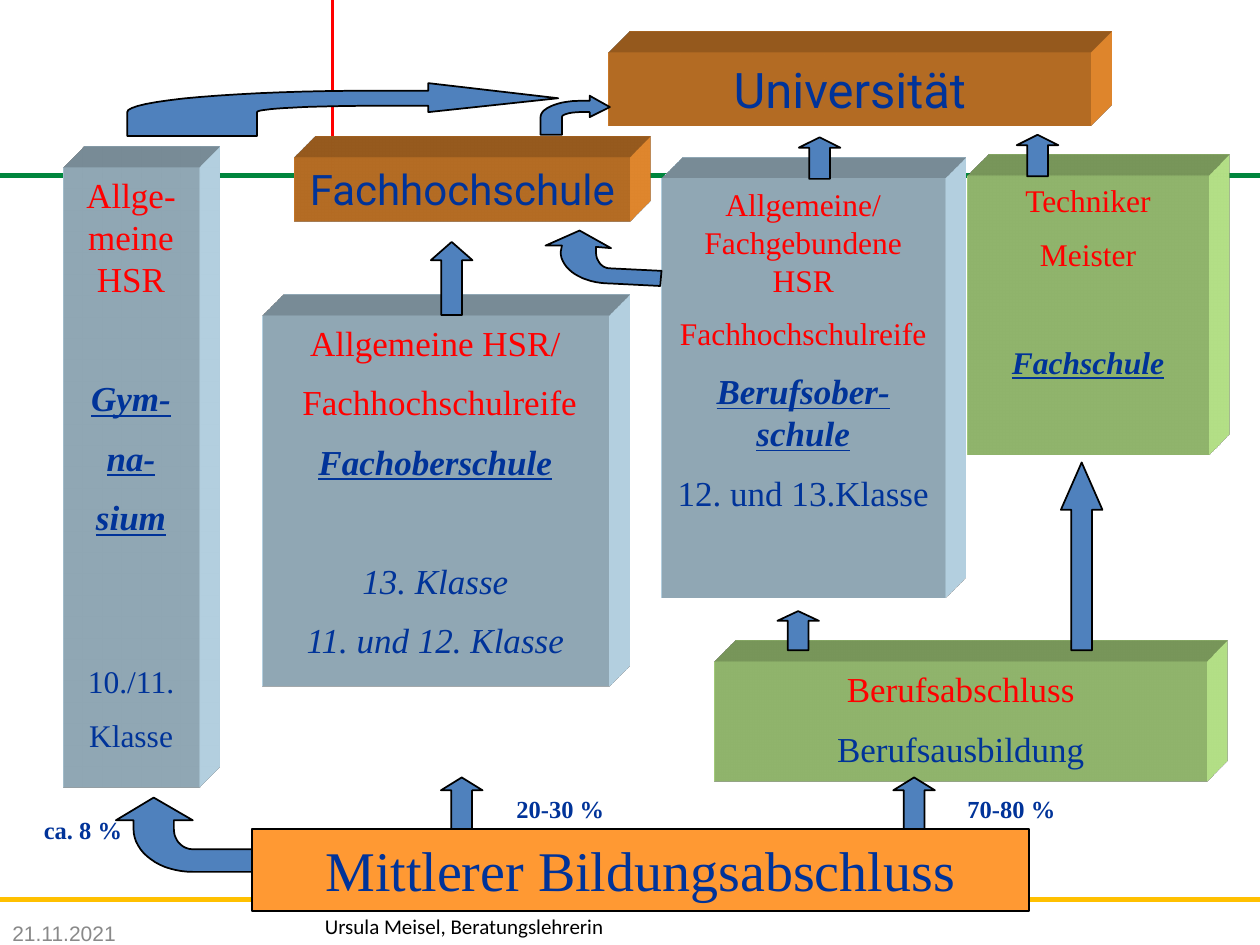
import math

from lxml import etree
from pptx import Presentation
from pptx import util as u
from pptx.dml.color import RGBColor
from pptx.enum import shapes, text
from pptx.oxml import parse_xml
from pptx.oxml.ns import nsdecls, qn

BLACK = RGBColor(0x00, 0x00, 0x00)
RED = RGBColor(0xFF, 0x00, 0x00)
NAVY = RGBColor(0x00, 0x33, 0x99)
GREY = RGBColor(0x89, 0x89, 0x89)
GREEN_RULE = RGBColor(0x00, 0x86, 0x3D)
YELLOW_RULE = RGBColor(0xFF, 0xC0, 0x00)
ORANGE = RGBColor(0xFF, 0x99, 0x33)
PALE_BLUE = RGBColor(0xCC, 0xEC, 0xFF)
PALE_GREEN = RGBColor(0xCC, 0xFF, 0x99)
ARROW_BLUE = RGBColor(0x4F, 0x81, 0xBD)

SERIF = "Times New Roman"
SCHOOL = {"bold": True, "italic": True, "underline": True}


def quarter_arc(centre, radii, start, end, steps=16):
    """Points on an ellipse between two angles in degrees, y pointing down."""
    angles = [math.radians(start + (end - start) * i / steps) for i in range(steps + 1)]
    return [(centre[0] + radii[0] * math.cos(a), centre[1] + radii[1] * math.sin(a))
            for a in angles]


def para(words, size=20, color=NAVY, before=None, **look):
    """One paragraph; the space before it is half its size unless given."""
    return {"words": words, "before": size / 2 if before is None else before,
            "font": {"size": u.Pt(size), "name": SERIF, **look}, "color": color}


class Diagram:
    def __init__(self, slide):
        self.slide = slide

    def set_text(self, shape, paras, align, anchor=text.MSO_ANCHOR.TOP):
        frame = shape.text_frame
        frame.word_wrap = True
        frame.auto_size = text.MSO_AUTO_SIZE.NONE
        frame.vertical_anchor = anchor
        for i, item in enumerate(paras):
            line = frame.add_paragraph() if i else frame.paragraphs[0]
            line.alignment = align
            if i:
                line.space_before = u.Pt(item["before"])
            run = line.add_run()
            run.text = item["words"]
            for key, value in item["font"].items():
                setattr(run.font, key, value)
            run.font.color.rgb = item["color"]

    def paint(self, shape, fill, outline=None):
        shape.shadow.inherit = False
        shape.fill.solid()
        shape.fill.fore_color.rgb = fill
        if outline is None:
            shape.line.fill.background()
        else:
            shape.line.color.rgb = outline
            shape.line.width = u.Pt(1)

    def preset(self, kind, place, fill, outline=None):
        shape = self.slide.shapes.add_shape(kind, *map(u.Inches, place))
        self.paint(shape, fill, outline)
        return shape

    def box(self, place, fill, paras, outline=None):
        shape = self.preset(shapes.MSO_SHAPE.RECTANGLE, place, fill, outline)
        self.set_text(shape, paras, text.PP_ALIGN.CENTER)
        return shape

    def block(self, place, fill, paras):
        """A box extruded towards the upper right."""
        properties = self.box(place, fill, paras)._element.spPr
        properties.append(parse_xml(
            f'<a:scene3d {nsdecls("a")}><a:camera prst="legacyObliqueTopRight"/>'
            '<a:lightRig rig="legacyFlat3" dir="b"/></a:scene3d>'))
        properties.append(parse_xml(
            f'<a:sp3d {nsdecls("a")} extrusionH="430200" prstMaterial="legacyMatte">'
            '<a:bevelT w="13500" h="13500" prst="angle"/>'
            '<a:bevelB w="13500" h="13500" prst="angle"/>'
            f'<a:extrusionClr><a:srgbClr val="{fill}"/></a:extrusionClr></a:sp3d>'))

    def label(self, place, item, anchor=text.MSO_ANCHOR.TOP):
        shape = self.slide.shapes.add_textbox(*map(u.Inches, place))
        self.set_text(shape, [item], text.PP_ALIGN.LEFT, anchor)

    def rule(self, start, end, color, width):
        line = self.slide.shapes.add_connector(
            shapes.MSO_CONNECTOR.STRAIGHT, *map(u.Inches, start + end))
        line.line.color.rgb = color
        line.line.width = u.Pt(width)
        etree.SubElement(line._element.spPr, qn("a:effectLst"))

    def up_arrow(self, left, top, height, head):
        arrow = self.preset(shapes.MSO_SHAPE.UP_ARROW, (left, top, 0.33, height),
                            ARROW_BLUE, BLACK)
        arrow.adjustments[0] = 0.5
        arrow.adjustments[1] = head

    def bent_arrow(self, head, centre, outer, inner, tail, neck, angles):
        """Head, outer bend, tail, inner bend and back to the head."""
        start, end = angles
        points = (head + quarter_arc(centre, outer, start, end) + tail
                  + quarter_arc(centre, inner, end, start) + neck)
        builder = self.slide.shapes.build_freeform(
            *(round(v * 1000) for v in points[0]), scale=u.Inches(1) / 1000)
        builder.add_line_segments([(round(x * 1000), round(y * 1000))
                                   for x, y in points[1:]], close=True)
        self.paint(builder.convert_to_shape(), ARROW_BLUE, BLACK)


def main():
    deck = Presentation()
    deck.slide_width, deck.slide_height = u.Inches(10), u.Inches(7.5)
    d = Diagram(deck.slides.add_slide(deck.slide_layouts[6]))

    # Footer name and background rules
    d.label((2.48, 7.2, 3.39, 0.3),
            para("Ursula Meisel, Beratungslehrerin", 12, BLACK, name="Calibri"))
    d.rule((0, 1.39), (10, 1.39), GREEN_RULE, 2.75)
    d.rule((2.64, 0), (2.64, 1.7), RED, 2)
    d.rule((0, 7.14), (10, 7.14), YELLOW_RULE, 2.75)

    # Starting point
    d.box((2, 6.58, 6.17, 0.65), ORANGE, [para("Mittlerer Bildungsabschluss", 32)], BLACK)

    # Schools
    d.block((0.5, 1.33, 1.08, 4.92), PALE_BLUE, [
        para("Allge-meine HSR", color=RED),
        para("Gym-", before=44, **SCHOOL), para("na-", **SCHOOL), para("sium", **SCHOOL),
        para("10./11.", 18, before=71), para("Klasse", 18)])
    d.block((2.08, 2.5, 2.75, 2.95), PALE_BLUE, [
        para("Allgemeine HSR/", color=RED), para(" Fachhochschulreife", color=RED),
        para("Fachoberschule", **SCHOOL),
        para("13. Klasse", before=44, italic=True), para("11. und 12. Klasse", italic=True)])
    d.block((5.67, 5.25, 3.91, 0.95), PALE_GREEN, [
        para("Berufsabschluss", color=RED), para("Berufsausbildung")])
    d.block((7.68, 1.39, 1.91, 2.22), PALE_GREEN, [
        para("Techniker", 18, RED), para("Meister", 18, RED),
        para("Fachschule", 18, before=40, **SCHOOL)])
    d.block((5.25, 1.42, 2.25, 3.32), PALE_BLUE, [
        para("Allgemeine/ Fachgebundene HSR", 18, RED), para("Fachhochschulreife", 18, RED),
        para("Berufsober-schule", **SCHOOL), para("12. und 13.Klasse")])

    # Higher education
    d.block((2.34, 1.25, 2.66, 0.51), ORANGE, [para("Fachhochschule", 24, name="Roboto")])
    d.block((4.83, 0.42, 3.83, 0.58), ORANGE, [para("Universität", 28, name="Roboto")])

    # Straight routes: left, top, height, head length
    for route in ((3.5, 6.17, 0.41, 0.31), (7.09, 6.17, 0.41, 0.31),
                  (8.42, 3.67, 1.49, 1.14), (6.17, 4.85, 0.31, 0.25),
                  (6.34, 1.09, 0.33, 0.25), (3.42, 1.92, 0.58, 0.44),
                  (8.07, 1.07, 0.33, 0.25)):
        d.up_arrow(*route)

    # Bent routes: to Gymnasium, Gymnasium to Universität,
    # Berufsoberschule to Fachhochschule, Fachhochschule to Universität
    d.bent_arrow([(1.22, 6.33), (0.92, 6.51), (1.06, 6.51)], (1.53, 6.58),
                 (0.47, 0.34), (0.15, 0.16), [(2, 6.92), (2, 6.74)],
                 [(1.38, 6.51), (1.53, 6.51)], (180, 90))
    d.bent_arrow([(4.43, 0.78), (3.4, 0.66), (3.4, 0.72)], (2.98, 0.89),
                 (1.97, 0.17), (0.94, 0.05), [(1.01, 1.08), (2.04, 1.08)],
                 [(3.4, 0.84), (3.4, 0.89)], (270, 180))
    d.bent_arrow([(4.6, 1.83), (4.33, 1.95), (4.46, 1.95)], (4.84, 2.0),
                 (0.39, 0.25), (0.11, 0.13), [(5.24, 2.27), (5.25, 2.15)],
                 [(4.73, 1.96), (4.85, 1.97)], (180, 90))
    d.bent_arrow([(4.84, 0.85), (4.68, 0.76), (4.68, 0.8)], (4.61, 0.93),
                 (0.32, 0.13), (0.15, 0.04), [(4.29, 1.07), (4.46, 1.07)],
                 [(4.68, 0.89), (4.68, 0.93)], (270, 180))

    # Shares of pupils
    for place, share in (((0.25, 6.42, 0.83, 0.34), "ca. 8 %"),
                         ((4, 6.25, 1, 0.33), "20-30 %"),
                         ((7.58, 6.25, 1.17, 0.33), "70-80 %")):
        d.label(place, para(share, 14, bold=True))

    # Date
    d.label((0, 7.25, 2.83, 0.31), para("21.11.2021", 12, GREY, name="Arial"),
            text.MSO_ANCHOR.MIDDLE)

    deck.save("out.pptx")


if __name__ == "__main__":
    main()
